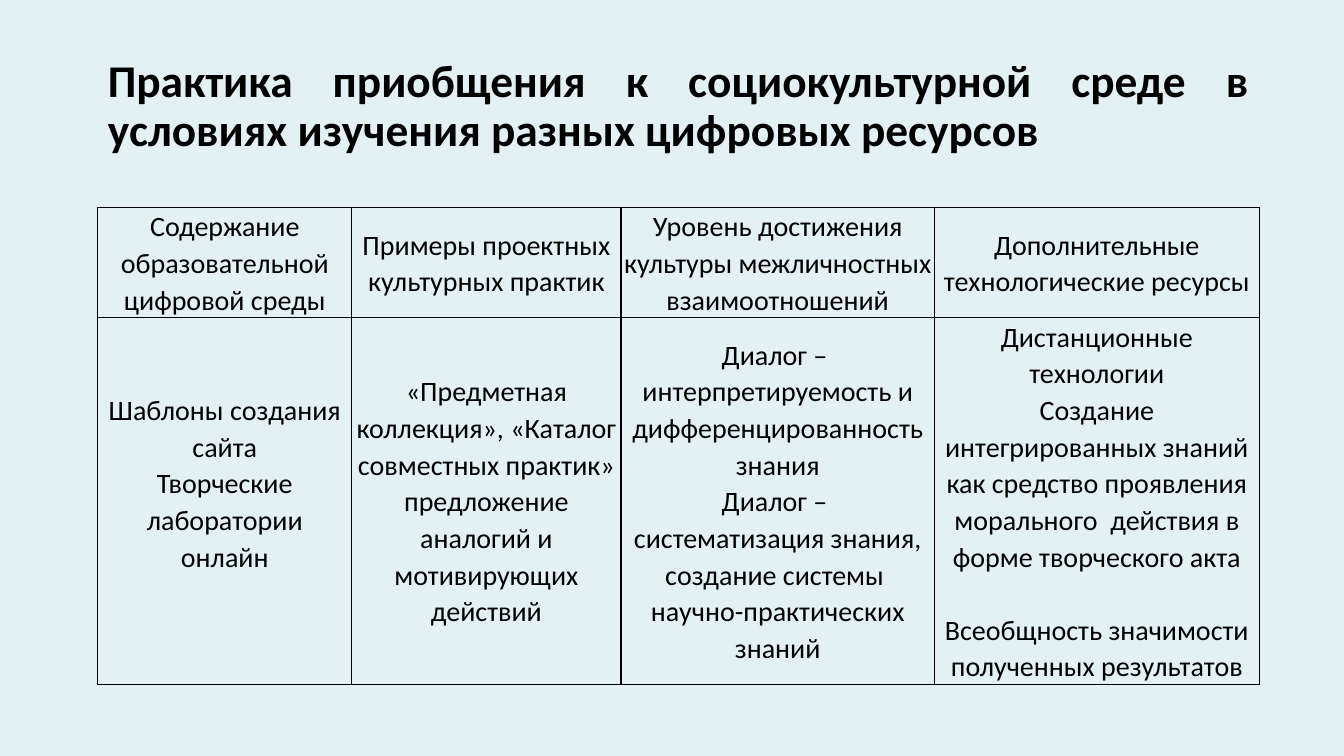
from lxml import etree
from pptx import Presentation, util as u
from pptx.dml.color import RGBColor
from pptx.enum import text
from pptx.oxml.ns import qn

TITLE = "Практика приобщения к социокультурной среде в условиях изучения разных цифровых ресурсов"
# Each cell is a list of paragraphs
ROWS = [
    [["Содержание образовательной цифровой среды"],
     ["Примеры проектных культурных практик"],
     ["Уровень достижения культуры межличностных взаимоотношений"],
     ["Дополнительные технологические ресурсы"]],
    [["Шаблоны создания сайта", "Творческие лаборатории онлайн"],
     ["«Предметная коллекция», «Каталог совместных практик»", "предложение",
      "аналогий и мотивирующих действий"],
     ["Диалог –  интерпретируемость и", "дифференцированность знания",
      "Диалог –  систематизация знания, создание системы  научно-практических знаний"],
     ["Дистанционные технологии",
      "Создание интегрированных знаний как средство проявления морального  действия "
      "в форме творческого акта",
      "Всеобщность значимости полученных результатов"]],
]
WIDTHS = [2.52, 2.67, 3.11, 3.22]
HEIGHTS = [1.09, 3.64]
LEFT, WIDE = 0.97, sum(WIDTHS)
LINE = 26  # one text line of the table, in points
INK, PAPER = "000000", "E4F1F4"


def color(code):
    return RGBColor.from_string(code)


def write(frame, lines, size, align, pitch, bold=False):
    frame.word_wrap = True
    frame.vertical_anchor = text.MSO_ANCHOR.MIDDLE
    for i, line in enumerate(lines):
        para = frame.add_paragraph() if i else frame.paragraphs[0]
        para.alignment, para.line_spacing = align, pitch
        para.space_before = para.space_after = u.Pt(0)
        run = para.add_run()
        run.text = line
        font = run.font
        font.name, font.size, font.bold = "Calibri", u.Pt(size), bold
        font.color.rgb = color(INK)


def border(cell):
    props = cell._tc.get_or_add_tcPr()
    for i, side in enumerate(("lnL", "lnR", "lnT", "lnB")):
        edge = etree.Element(qn("a:" + side), w=str(u.Pt(1)))
        fill = etree.SubElement(edge, qn("a:solidFill"))
        etree.SubElement(fill, qn("a:srgbClr"), val=INK)
        props.insert(i, edge)


deck = Presentation()
deck.slide_width, deck.slide_height = u.Inches(13.33), u.Inches(7.5)
slide = deck.slides.add_slide(deck.slide_layouts[5])
slide.background.fill.solid()
slide.background.fill.fore_color.rgb = color(PAPER)

# Title
title = slide.shapes.title
title.left, title.top = u.Inches(LEFT), u.Inches(0.54)
title.width, title.height = u.Inches(WIDE), u.Inches(1.04)
title.text_frame.auto_size = text.MSO_AUTO_SIZE.NONE
write(title.text_frame, [TITLE], 32.4, text.PP_ALIGN.JUSTIFY, 0.9, bold=True)

# Table
grid = slide.shapes.add_table(
    len(ROWS), len(WIDTHS), u.Inches(LEFT), u.Inches(2.06),
    u.Inches(WIDE), u.Inches(sum(HEIGHTS))).table
grid.first_row = grid.horz_banding = False
for col, width in zip(grid.columns, WIDTHS):
    col.width = u.Inches(width)
for row, height, cells in zip(grid.rows, HEIGHTS, ROWS):
    row.height = u.Inches(height)
    for cell, lines in zip(row.cells, cells):
        cell.margin_left = cell.margin_right = u.Inches(0.03)
        cell.margin_top = cell.margin_bottom = 0
        cell.vertical_anchor = text.MSO_ANCHOR.MIDDLE
        cell.fill.background()
        border(cell)
        write(cell.text_frame, lines, 20, text.PP_ALIGN.CENTER, 1.07)

# One line of air below the first cell and above the last paragraph
grid.cell(1, 0).margin_bottom = u.Pt(LINE)
grid.cell(1, 3).text_frame.paragraphs[-1].space_before = u.Pt(LINE)

deck.save("out.pptx")
